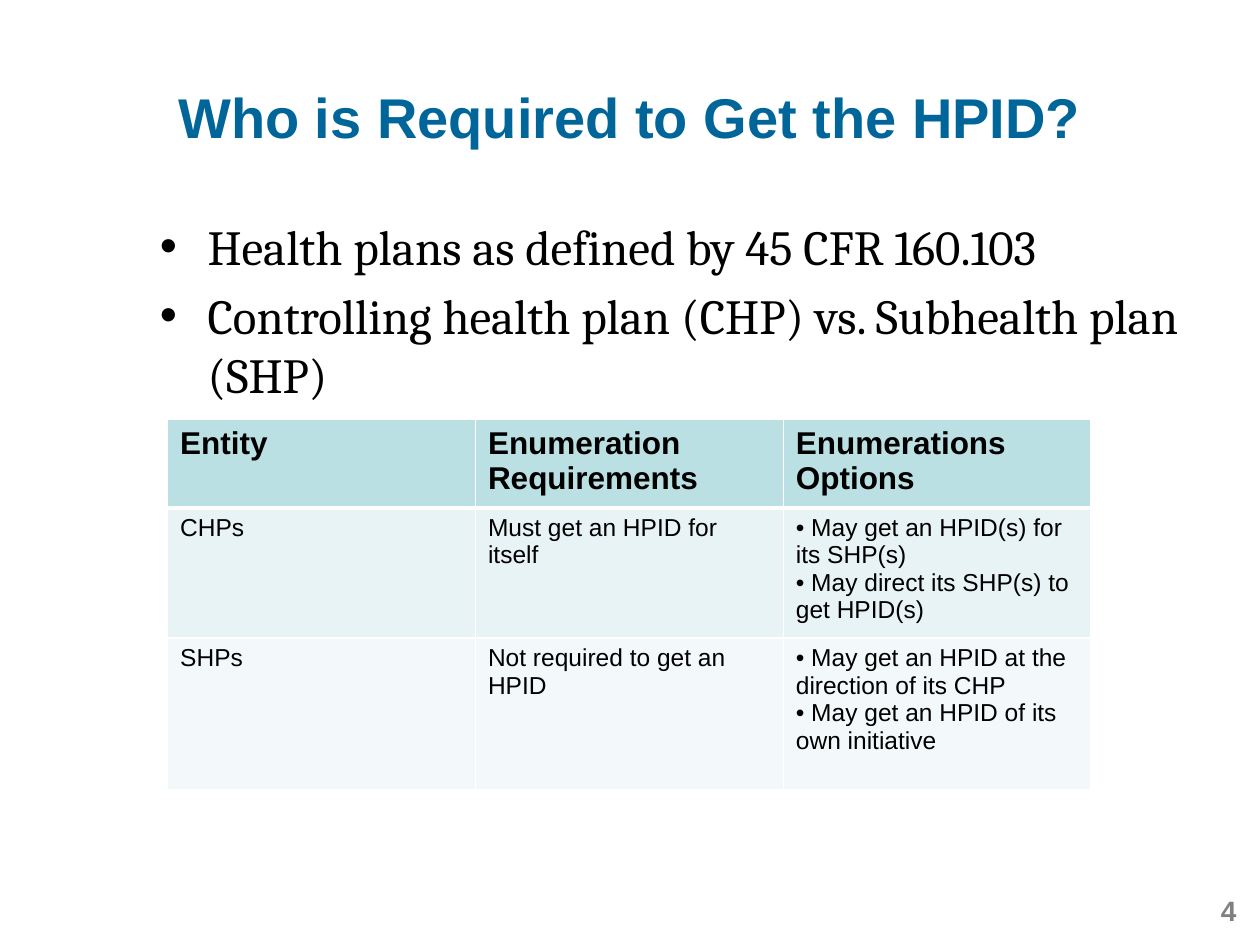
from lxml import etree
from pptx import Presentation
from pptx import util as u
from pptx.dml.color import RGBColor
from pptx.enum import text
from pptx.oxml import ns

BLUE = RGBColor(0x00, 0x66, 0x99)
BLACK = RGBColor(0, 0, 0)
GRAY = RGBColor(0x80, 0x80, 0x80)
TEAL = RGBColor(0xBB, 0xE0, 0xE3)
PALE = RGBColor(0xE7, 0xF3, 0xF4)
MIST = RGBColor(0xF3, 0xF9, 0xFA)
EDGE = "FFFFFF"

POINTS = [
    "Health plans as defined by 45 CFR 160.103",
    "Controlling health plan (CHP) vs. Subhealth plan (SHP)",
]
ROWS = [
    (0.66, TEAL, [["Entity"], ["Enumeration Requirements"], ["Enumerations Options"]]),
    (0.98, PALE, [["CHPs"], ["Must get an HPID for itself"],
                  [" May get an HPID(s) for its SHP(s)",
                   " May direct its SHP(s) to get HPID(s)"]]),
    (1.2, MIST, [["SHPs"], ["Not required to get an HPID"],
                 [" May get an HPID at the direction of its CHP",
                  " May get an HPID of its own initiative"]]),
]


def style(para, size, color=BLACK, bold=False, face="Arial"):
    for run in para.runs:
        font = run.font
        font.size = u.Pt(size)
        font.bold = bold
        font.name = face
        font.color.rgb = color


def bullet(para, indent=0):
    props = para._p.get_or_add_pPr()
    props.set("marL", str(u.Inches(indent)))
    props.set("indent", str(-u.Inches(indent)))
    etree.SubElement(props, ns.qn("a:buFont")).set("typeface", "Arial")
    etree.SubElement(props, ns.qn("a:buChar")).set("char", "•")


def add_box(slide, left, top, width, height, lines, anchor, align):
    box = slide.shapes.add_textbox(
        u.Inches(left), u.Inches(top), u.Inches(width), u.Inches(height))
    frame = box.text_frame
    frame.word_wrap = True
    frame.vertical_anchor = anchor
    frame.text = "\n".join(lines)
    for para in frame.paragraphs:
        para.alignment = align
    return frame.paragraphs


def add_edges(cell, base):
    props = cell._tc.get_or_add_tcPr()
    sides = [("L", 1), ("R", 1), ("T", 1), ("B", base)]
    for i, (side, width) in enumerate(sides):
        line = etree.Element(ns.qn("a:ln" + side), w=str(u.Pt(width)))
        fill = etree.SubElement(line, ns.qn("a:solidFill"))
        etree.SubElement(fill, ns.qn("a:srgbClr")).set("val", EDGE)
        props.insert(i, line)


def fill_cell(cell, lines, color, head):
    cell.fill.solid()
    cell.fill.fore_color.rgb = color
    add_edges(cell, 3 if head else 1)
    cell.text_frame.text = "\n".join(lines)
    for para in cell.text_frame.paragraphs:
        if len(lines) > 1:
            bullet(para)
        style(para, 18 if head else 14, bold=head)


def add_grid(slide):
    high = sum(row[0] for row in ROWS)
    table = slide.shapes.add_table(
        len(ROWS), 3, u.Inches(1.33), u.Inches(3.33),
        u.Inches(7.33), u.Inches(high)).table
    for i, (height, color, cells) in enumerate(ROWS):
        table.rows[i].height = u.Inches(height)
        for j, lines in enumerate(cells):
            fill_cell(table.cell(i, j), lines, color, i == 0)


def main():
    deck = Presentation()
    deck.slide_width = u.Inches(10)
    deck.slide_height = u.Inches(7.5)
    slide = deck.slides.add_slide(deck.slide_layouts[6])
    anchor, align = text.MSO_ANCHOR, text.PP_ALIGN

    title = add_box(slide, 0.5, 0.3, 9, 1.25, ["Who is Required to Get the HPID?"],
                    anchor.MIDDLE, align.CENTER)
    style(title[0], 32, BLUE, True)

    body = add_box(slide, 1.17, 1.67, 8.33, 4.42, POINTS, anchor.TOP, align.LEFT)
    for i, para in enumerate(body):
        para.space_before = u.Pt(5.6 if i else 0)
        bullet(para, 0.38)
        style(para, 28, face="Cambria")

    add_grid(slide)

    page = add_box(slide, 9.33, 6.98, 0.58, 0.43, ["4"], anchor.BOTTOM, align.RIGHT)
    style(page[0], 16, GRAY, True)
    deck.save("out.pptx")


if __name__ == "__main__":
    main()
